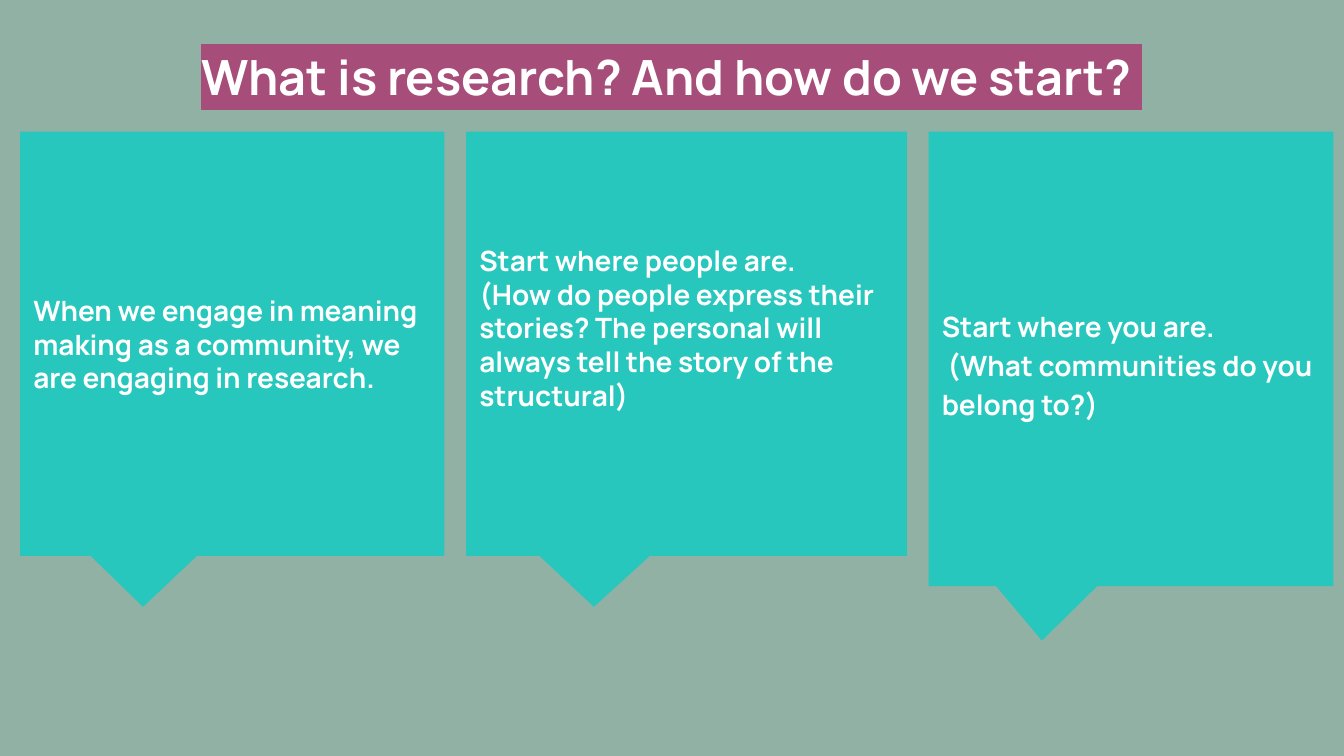
import lxml.etree
import pptx
import pptx.dml.color
import pptx.enum.shapes
import pptx.enum.text
import pptx.oxml.ns
import pptx.util

Cm = pptx.util.Cm
COLOURS = {"page": "91B1A5", "highlight": "A64D79", "callout": "27C7BD", "text": "FFFFFF"}
FONT = "Manrope"
INSET = 0.25


def rgb(name):
    """Return a named palette colour."""
    return pptx.dml.color.RGBColor.from_string(COLOURS[name])


def add_span(para, text, size):
    """Add one bold white run to a paragraph and return it."""
    span = para.add_run()
    span.text = text
    span.font.size = pptx.util.Pt(size)
    span.font.bold = True
    span.font.name = FONT
    span.font.color.rgb = rgb("text")
    return span


def highlight(span, colour):
    """Put a highlight colour behind a run."""
    mark = lxml.etree.Element(pptx.oxml.ns.qn("a:highlight"))
    lxml.etree.SubElement(mark, pptx.oxml.ns.qn("a:srgbClr"), val=COLOURS[colour])
    span.font.fill._xPr.find(pptx.oxml.ns.qn("a:solidFill")).addnext(mark)


def set_frame(frame, anchor, inset_top=INSET, inset_bottom=INSET):
    """Set wrapping, anchor and insets of a text frame."""
    frame.word_wrap = True
    frame.auto_size = pptx.enum.text.MSO_AUTO_SIZE.NONE
    frame.vertical_anchor = anchor
    frame.margin_left = frame.margin_right = Cm(INSET)
    frame.margin_top, frame.margin_bottom = Cm(inset_top), Cm(inset_bottom)


def place_title(page, left, top, width, height, text):
    """Place the highlighted slide title."""
    title = page.shapes.title
    title.left, title.top = Cm(left), Cm(top)
    title.width, title.height = Cm(width), Cm(height)
    set_frame(title.text_frame, pptx.enum.text.MSO_ANCHOR.TOP)
    para = title.text_frame.paragraphs[0]
    para.alignment = pptx.enum.text.PP_ALIGN.CENTER
    para.line_spacing = 1.15
    highlight(add_span(para, text, 26), "highlight")


def place_callout(page, left, top, width, height, lines, tail, spacing=1.0, **insets):
    """Place a speech callout with one paragraph per line."""
    box = page.shapes.add_shape(
        pptx.enum.shapes.MSO_SHAPE.RECTANGULAR_CALLOUT,
        Cm(left), Cm(top), Cm(width), Cm(height))
    box.adjustments[0], box.adjustments[1] = tail
    box.shadow.inherit = False
    box.fill.solid()
    box.fill.fore_color.rgb = rgb("callout")
    box.line.fill.background()
    frame = box.text_frame
    set_frame(frame, pptx.enum.text.MSO_ANCHOR.MIDDLE, **insets)
    for index, line in enumerate(lines):
        para = frame.add_paragraph() if index else frame.paragraphs[0]
        para.alignment = pptx.enum.text.PP_ALIGN.LEFT
        para.line_spacing = spacing
        add_span(para, line, 15)


def main():
    """Build the slide and save the deck."""
    deck = pptx.Presentation()
    deck.slide_width, deck.slide_height = Cm(25.4), Cm(14.29)
    page = deck.slides.add_slide(deck.slide_layouts[5])
    page.background.fill.solid()
    page.background.fill.fore_color.rgb = rgb("page")

    place_title(page, 0.86, 0.48, 23.67, 1.6, "What is research? And how do we start? ")
    callouts = [
        (8.02, 8.02, ["When we engage in meaning making as a community, "
                      "we are engaging in research."],
         (-0.21, 0.62), {}),
        (8.33, 8.02, ["Start where people are.",
                      "(How do people express their stories? The personal will "
                      "always tell the story of the structural)"],
         (-0.21, 0.62), {"inset_bottom": 0.86}),
        (7.65, 8.59, ["Start where you are.", " (What communities do you belong to?)"],
         (-0.22, 0.62), {"spacing": 1.15, "inset_top": 0.4}),
    ]
    left, gap = 0.38, 0.41
    for width, height, lines, tail, options in callouts:
        place_callout(page, left, 2.49, width, height, lines, tail, **options)
        left += width + gap
    deck.save("out.pptx")


if __name__ == "__main__":
    main()
